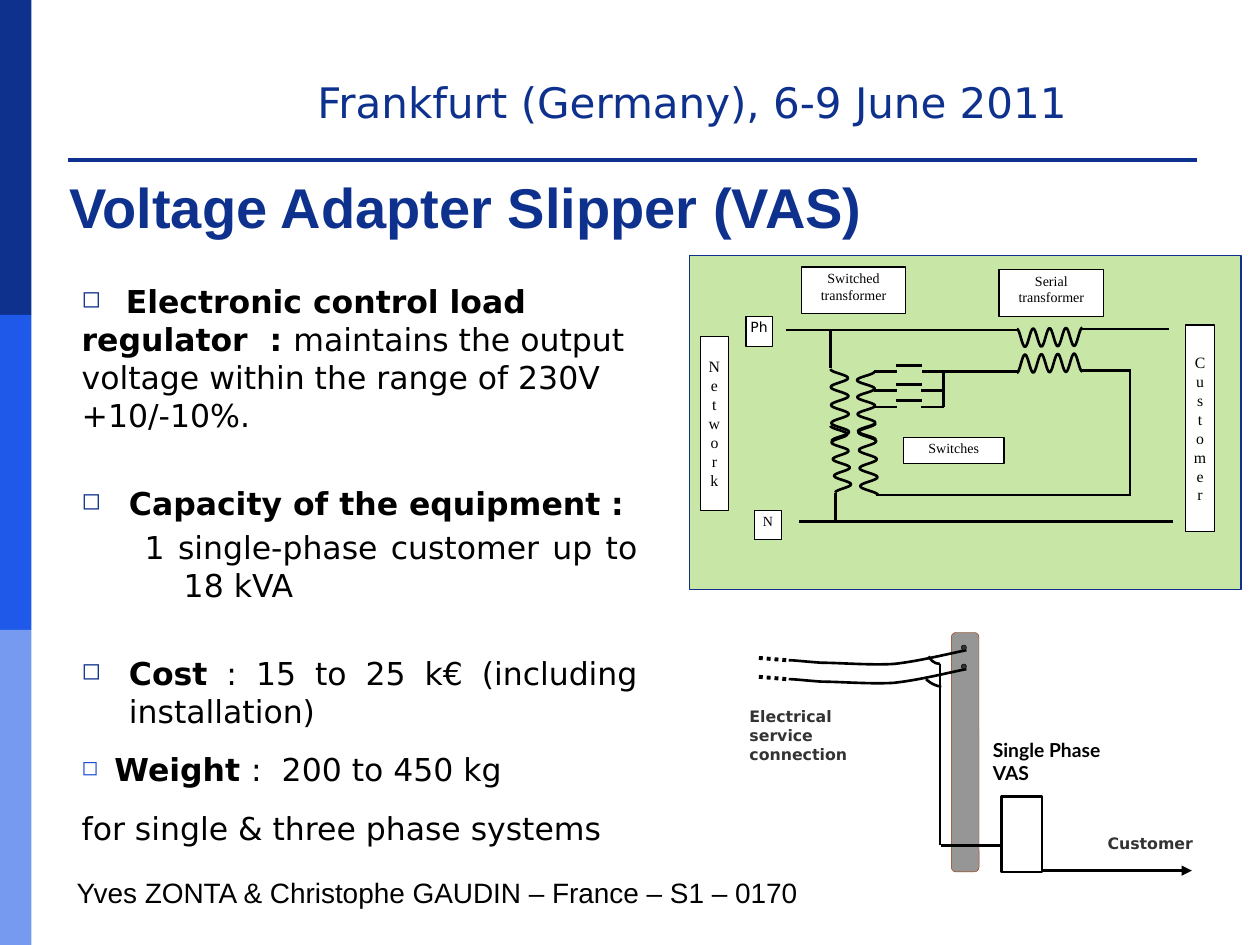
import pptx
import pptx.dml.color
import pptx.enum.dml
import pptx.enum.shapes
import pptx.enum.text
import pptx.oxml
import pptx.oxml.ns
import pptx.util

RGB = pptx.dml.color.RGBColor
SHAPE = pptx.enum.shapes.MSO_SHAPE
ALIGN = pptx.enum.text.PP_ALIGN
ANCHOR = pptx.enum.text.MSO_ANCHOR

NAVY = RGB(0x0E, 0x31, 0x8D)
BLUE = RGB(0x1F, 0x59, 0xE9)
SKY = RGB(0x77, 0x9A, 0xF1)
BULLET_BLUE = RGB(0x15, 0x4B, 0xD1)
GREEN = RGB(0x92, 0xD0, 0x50)
GREY = RGB(0x96, 0x96, 0x96)
CHARCOAL = RGB(0x33, 0x33, 0x33)
RUST = RGB(0x99, 0x33, 0x00)
BLACK = RGB(0, 0, 0)
WHITE = RGB(255, 255, 255)

SANS = "DejaVu Sans"
SERIF = "Times New Roman"

WIDTH = pptx.util.Inches(10)
HEIGHT = pptx.util.Inches(7.5)
CELL = WIDTH / 100


def cells(count):
    return pptx.util.Emu(round(count * CELL))


def within(box, x, y, *size):
    return [cells(v) for v in (box[0] + x, box[1] + y, *size)]


def append_xml(parent, tag, **attributes):
    child = pptx.oxml.parse_xml(f"<a:{tag} {pptx.oxml.ns.nsdecls('a')}/>")
    for key, value in attributes.items():
        child.set(key, str(value))
    parent.append(child)
    return child


def write(frame, text, lead="", size=18, font=SANS, color=BLACK, bold=False,
          align=ALIGN.LEFT, before=0, margin=0, indent=0, bullet=None, tab=None):
    paragraph = frame.paragraphs[-1]
    if paragraph.runs:
        paragraph = frame.add_paragraph()
    properties = paragraph._p.get_or_add_pPr()
    properties.set("marL", str(cells(margin)))
    properties.set("indent", str(cells(indent)))
    if bullet:
        bullet_color, percent = bullet
        append_xml(append_xml(properties, "buClr"), "srgbClr", val=bullet_color)
        append_xml(properties, "buSzPct", val=percent * 1000)
        append_xml(properties, "buChar", char="◻")
    else:
        append_xml(properties, "buNone")
    if tab:
        append_xml(append_xml(properties, "tabLst"), "tab", pos=cells(tab), algn="l")
    paragraph.alignment = align
    paragraph.space_before = pptx.util.Pt(before)
    for words, heavy in ((lead, True), (text, bold)):
        if words:
            run = paragraph.add_run()
            run.text = words
            run.font.size = pptx.util.Pt(size)
            run.font.name = font
            run.font.bold = heavy
            run.font.color.rgb = color


def set_insets(frame, left, top, right, bottom):
    frame.margin_left, frame.margin_top = pptx.util.Inches(left), pptx.util.Inches(top)
    frame.margin_right, frame.margin_bottom = pptx.util.Inches(right), pptx.util.Inches(bottom)


def text_area(slide, place):
    frame = slide.shapes.add_textbox(*place).text_frame
    frame.word_wrap = True
    return frame


def block(slide, place, fill, line=None, weight=0.75, kind=SHAPE.RECTANGLE):
    shape = slide.shapes.add_shape(kind, *place)
    shape.shadow.inherit = False
    shape.fill.solid()
    shape.fill.fore_color.rgb = fill
    if line is None:
        shape.line.fill.background()
    else:
        shape.line.color.rgb = line
        shape.line.width = pptx.util.Pt(weight)
    return shape


def label(slide, place, text, insets=(0.02,) * 4, line=BLACK, vertical=False, **style):
    frame = block(slide, place, WHITE, line).text_frame
    frame.word_wrap = True
    frame.vertical_anchor = ANCHOR.TOP
    set_insets(frame, *insets)
    if vertical:
        frame._txBody.bodyPr.set("vert", "wordArtVert")
    for part in text.split("\n"):
        write(frame, part, **style)


def wire(slide, box, start, end, weight=1.5, dotted=False, arrow=False):
    line = slide.shapes.add_connector(pptx.enum.shapes.MSO_CONNECTOR.STRAIGHT,
                                      *within(box, *start), *within(box, *end))
    append_xml(line._element.spPr, "effectLst")
    line.line.color.rgb = BLACK
    line.line.width = pptx.util.Pt(weight)
    if dotted:
        line.line.dash_style = pptx.enum.dml.MSO_LINE.ROUND_DOT
    if arrow:
        append_xml(line.line._get_or_add_ln(), "tailEnd", type="triangle")


def curve(slide, box, controls):
    first, *rest = [within(box, x, y) for x, y in controls]
    builder = slide.shapes.build_freeform(*first)
    builder.add_line_segments(rest, close=False)
    shape = builder.convert_to_shape()
    shape.shadow.inherit = False
    shape.fill.background()
    shape.line.color.rgb = BLACK
    shape.line.width = pptx.util.Pt(1.5)
    steps = list(shape._element.iter(pptx.oxml.ns.qn("a:lnTo")))
    outline = steps[0].getparent()
    for index in range(0, len(steps), 3):
        bezier = append_xml(outline, "cubicBezTo")
        for step in steps[index:index + 3]:
            bezier.append(step[0])
            outline.remove(step)


def coil(slide, box, start, end, swing, turns=4):
    halves = 2 * turns

    def at(share, side):
        return [a + (b - a) * share + side * s for a, b, s in zip(start, end, swing)]

    controls = [at(0, 0)]
    for half in range(halves):
        side = half % 2
        controls += [at((half + 0.36) / halves, side), at((half + 0.64) / halves, 1 - side),
                     at((half + 1) / halves, 1 - side)]
    curve(slide, box, controls)


def rule(slide, place):
    table = slide.shapes.add_table(1, 1, *place).table
    table.first_row = table.horz_banding = False
    cell = table.cell(0, 0)
    cell.margin_left = cell.margin_right = cell.margin_top = cell.margin_bottom = 0
    append_xml(cell.text_frame.paragraphs[0]._p, "endParaRPr", sz=800)
    properties = cell._tc.get_or_add_tcPr()
    for side in ("lnL", "lnR", "lnT"):
        append_xml(append_xml(properties, side), "noFill")
    bottom = append_xml(properties, "lnB", w=pptx.util.Pt(2.25))
    append_xml(append_xml(bottom, "solidFill"), "srgbClr", val=NAVY)
    cell.fill.background()


def page_frame(slide, box):
    for row, color in enumerate((NAVY, BLUE, SKY)):
        block(slide, within(box, 0, row * 25, 2.5, 25), color)
    rule(slide, within(box, 5.4, 10.7, 89.6, 2))
    write(text_area(slide, within(box, 24.2, 5.6, 65.8, 5)),
          "Frankfurt (Germany), 6-9 June 2011", size=24, color=NAVY)
    write(text_area(slide, within(box, 5.1, 69, 78.8, 3.7)),
          "Yves ZONTA & Christophe GAUDIN – France – S1 – 0170", size=16, font="Arial")


def heading(slide, box):
    title = slide.shapes.title
    title.left, title.top, title.width, title.height = within(box, 0, 0, *box[2:])
    title.text_frame.vertical_anchor = ANCHOR.MIDDLE
    title.text_frame.auto_size = pptx.enum.text.MSO_AUTO_SIZE.NONE
    write(title.text_frame, "Voltage Adapter Slipper (VAS)", size=32, font="Arial",
          color=NAVY, bold=True)


def features(slide, box):
    frame = text_area(slide, within(box, 0, 0, *box[2:]))
    square = (NAVY, 75)
    hanging = dict(align=ALIGN.JUSTIFY, margin=3.75, indent=-3.75, bullet=square, before=28.8)
    write(frame, "maintains the output voltage within the range of 230V +10/-10%.",
          lead="\tElectronic control load regulator  : ", bullet=square, tab=3.5)
    write(frame, "", lead="Capacity of the equipment :", **hanging)
    write(frame, "1 single-phase customer up to 18 kVA", align=ALIGN.JUSTIFY,
          margin=8.1, indent=-3.1, before=3.6)
    write(frame, " : 15 to 25 k€ (including installation)", lead="Cost", **hanging)
    write(frame, ":  200 to 450 kg", lead="Weight ", margin=2.6, indent=-2.6,
          bullet=(BULLET_BLUE, 65), before=12)
    write(frame, "for single & three phase systems", before=12)


def circuit(slide, box):
    panel = block(slide, within(box, 0, 0, *box[2:]), GREEN, NAVY)
    tint = panel._element.spPr.find(".//" + pptx.oxml.ns.qn("a:srgbClr"))
    append_xml(tint, "alpha", val=50000)
    for start, end in (((7.7, 5.9), (26.1, 5.9)), ((31.2, 5.8), (38.1, 5.8)),
                       ((18.5, 9.2), (26.1, 9.2)), ((31.2, 9.1), (35.1, 9.1)),
                       ((35, 9), (35, 19)), ((14.8, 19), (35.1, 19)),
                       ((11.6, 21.2), (11.6, 18.8)), ((8.7, 21.1), (38.4, 21.1)),
                       ((11.2, 8.9), (11.2, 5.9)), ((20.2, 12), (20.2, 9.2)),
                       ((18.4, 10.7), (20.2, 10.7)), ((18.4, 12), (20.2, 12))):
        wire(slide, box, start, end)
    for tap in (9.2, 10.7, 12):
        wire(slide, box, (14.7, tap), (16.5, tap))
        wire(slide, box, (16.4, tap - 0.5), (18.5, tap - 0.5))
    for start, end, swing in (((11.2, 9), (11.3, 14.7), (1.4, 0)),
                              ((11.2, 13.5), (11.6, 18.8), (1.3, 0)),
                              ((14.7, 9.2), (14.8, 14.6), (-1.4, 0)),
                              ((14.8, 13.3), (15, 19), (-1.4, 0)),
                              ((26, 5.8), (31.2, 5.7), (0, 1.45)),
                              ((26, 9.3), (31.2, 9.2), (0, -1.45))):
        coil(slide, box, start, end, swing)
    for text, place, style in (
            ("Ph", (4.5, 4.8, 2.1, 2.4), dict(font=SANS)),
            ("N", (5.2, 20.2, 2.1, 2.3), {}),
            ("Switches", (17, 14.4, 8, 2.1), {}),
            ("Switched transformer", (8.9, 0.9, 8.3, 3.7), {}),
            ("Serial\ntransformer", (24.6, 1.1, 8.3, 3.7), {}),
            ("Network", (0.9, 6.4, 2.2, 13.8), dict(size=9, vertical=True)),
            ("Customer", (39.4, 5.5, 2.3, 16.4), dict(size=9, vertical=True))):
        label(slide, within(box, *place), text,
              **{"size": 8, "font": SERIF, "align": ALIGN.CENTER, **style})


def connection(slide, box):
    block(slide, within(box, 17, 0, 2.2, 19), GREY, RUST, 0.25, SHAPE.ROUNDED_RECTANGLE)
    cable = [(18.2, 1.4), (16.3, 1.8), (14.3, 2.3), (12.4, 2.5), (10.5, 2.6),
             (8.1, 2.4), (6.7, 2.4), (5.3, 2.3), (4.5, 2.2), (4.1, 2.2)]
    for drop in (0, 1.5):
        curve(slide, box, [(x, y + drop) for x, y in cable])
        wire(slide, box, (3.9, 2.2 + drop), (1.5, 2 + drop), weight=2.25, dotted=True)
        block(slide, within(box, 17.8, 1 + drop, 0.4, 0.4), CHARCOAL, BLACK, 0.25, SHAPE.OVAL)
    curve(slide, box, [(15.2, 1.9), (15.3, 2.1), (15.6, 2.5), (16.1, 2.5)])
    curve(slide, box, [(15, 3.7), (15.1, 3.8), (15.5, 4.2), (16.2, 4.3)])
    block(slide, within(box, 21, 13, 3.2, 6), WHITE, BLACK, 1.5)
    wire(slide, box, (16.1, 2.5), (16.1, 16.9))
    wire(slide, box, (16.2, 16.9), (21, 16.9))
    wire(slide, box, (24.2, 18.9), (36.1, 18.9), arrow=True)
    label(slide, within(box, 20.1, 8.3, 11, 3.7), "Single Phase VAS", line=None,
          insets=(0.02, 0.01, 0.02, 0), size=11, font="Lato", bold=True)
    for text, place, insets in (
            ("Electrical service connection", (0, 5.4, 10.3, 5.1), (0.1, 0.05, 0.1, 0.05)),
            ("Customer", (29.4, 16, 7.3, 1.6), (0, 0, 0, 0))):
        label(slide, within(box, *place), text, line=None, insets=insets,
              size=9, color=CHARCOAL, bold=True)


def main():
    deck = pptx.Presentation()
    deck.slide_width, deck.slide_height = WIDTH, HEIGHT
    slide = deck.slides.add_slide(deck.slide_layouts[5])
    page_frame(slide, (0, 0, 100, 75))
    heading(slide, (4.5, 13.1, 90, 6.5))
    features(slide, (5.5, 21.9, 46.1, 46.7))
    circuit(slide, (54.7, 20.3, 43.8, 26.5))
    connection(slide, (58.5, 50.2, 36.7, 19))
    deck.save("out.pptx")


if __name__ == "__main__":
    main()
